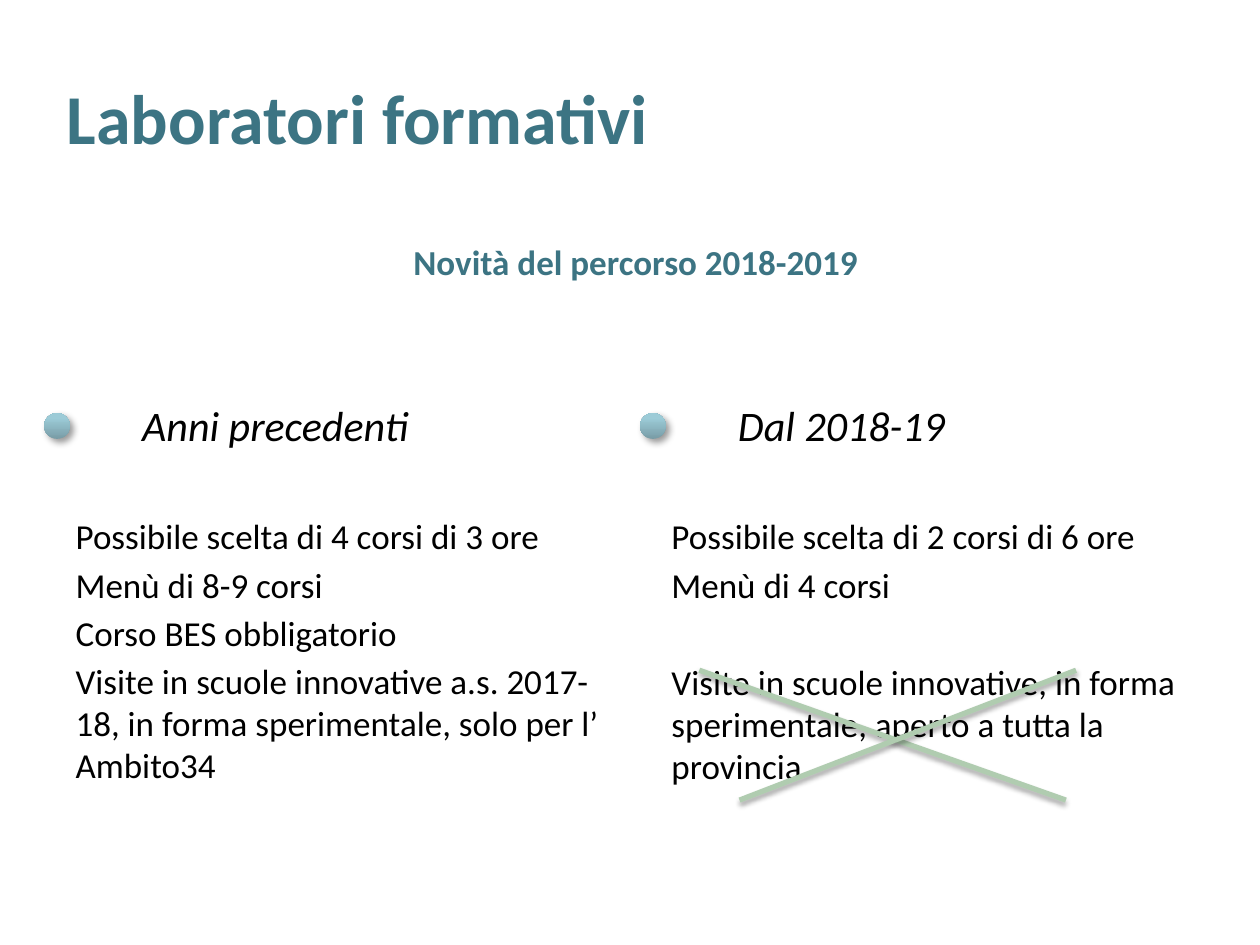
"""Build the slide comparing the training workshops before and from 2018-19."""
from lxml.etree import SubElement
from pptx import Presentation
from pptx.dml.color import RGBColor
from pptx.enum.shapes import MSO_CONNECTOR, MSO_SHAPE
from pptx.enum.text import MSO_ANCHOR, MSO_AUTO_SIZE, PP_ALIGN
from pptx.oxml.ns import qn
from pptx.util import Pt

THEME = {
    "font": "Calibri", "teal": "3C7483", "ink": "000000",
    "dark": "789CA6", "light": "9CCBD7", "cross": "B0CCB0",
    "title": 40, "head": 24, "text": 20,
}
TITLE = "Laboratori formativi"
NEWS = "Novità del percorso 2018-2019"
GAP, SKIP, BREAK = 3.6, 31.6, 37.2
COLUMNS = [
    ("Anni precedenti", [
        ("Possibile scelta di 4 corsi di 3 ore", BREAK),
        ("Menù di 8-9 corsi", GAP),
        ("Corso BES obbligatorio", GAP),
        ("Visite in scuole innovative a.s. 2017-18, in forma sperimentale, "
         "solo per l’ Ambito34", GAP),
    ]),
    ("Dal 2018-19", [
        ("Possibile scelta di 2 corsi di 6 ore", BREAK),
        ("Menù di 4 corsi", GAP),
        ("Visite in scuole innovative, in forma sperimentale, "
         "aperto a tutta la provincia", SKIP),
    ]),
]
LEFT, PITCH = 36, 340.5
STROKES = [(399.6, 383, 609.1, 457.2), (422.6, 457.2, 614.9, 383)]


def color(name):
    return RGBColor.from_string(THEME[name])


def place(shape, *box):
    shape.left, shape.top, shape.width, shape.height = map(Pt, box)
    frame = shape.text_frame
    frame.word_wrap = True
    frame.auto_size = MSO_AUTO_SIZE.NONE
    return frame


def style(par, size, tint, bold=False, italic=False):
    font = par.font
    font.name, font.size = THEME["font"], Pt(THEME[size])
    font.bold, font.italic = bold, italic
    font.color.rgb = color(tint)


def shade(shape, alpha, blur, dist, angle):
    props = shape._element.spPr
    for old in props.findall(qn("a:effectLst")):
        props.remove(old)
    cast = SubElement(
        SubElement(props, qn("a:effectLst")), qn("a:outerShdw"),
        blurRad=str(Pt(blur)), dist=str(Pt(dist)),
        dir=str(angle * 60000), rotWithShape="0")
    tint = SubElement(cast, qn("a:srgbClr"), val=THEME["ink"])
    SubElement(tint, qn("a:alpha"), val=str(alpha * 1000))


def add_line(frame, text, size, before=0, indent=0, italic=False):
    par = frame.paragraphs[0] if not frame.text else frame.add_paragraph()
    par.text = text
    par.space_before = Pt(before)
    props = par._p.get_or_add_pPr()
    props.set("marL", str(Pt(indent)))
    props.set("indent", "0")
    SubElement(props, qn("a:buNone"))
    style(par, size, "ink", italic=italic)


def add_ball(slide, left):
    ball = slide.shapes.add_shape(
        MSO_SHAPE.OVAL, Pt(left), Pt(236), Pt(14.8), Pt(14.8))
    ball.fill.gradient()
    ball.fill.gradient_angle = 90
    stops = zip(ball.fill.gradient_stops, ("dark", "light"), (0, 0.8))
    for stop, tint, spot in stops:
        stop.color.rgb = color(tint)
        stop.position = spot
    ball.line.fill.background()
    shade(ball, 40, 4, 3, 45)


def main():
    deck = Presentation()
    deck.slide_width, deck.slide_height = Pt(720), Pt(540)
    slide = deck.slides.add_slide(deck.slide_layouts[3])
    title, *bodies = slide.placeholders

    frame = place(title, 31, 21.6, 510.5, 90)
    frame.text = TITLE
    frame.vertical_anchor = MSO_ANCHOR.MIDDLE
    frame.paragraphs[0].alignment = PP_ALIGN.LEFT
    style(frame.paragraphs[0], "title", "teal", bold=True)

    for col, (body, (head, items)) in enumerate(zip(bodies, COLUMNS)):
        left = LEFT + col * PITCH
        frame = place(body, left, 224.6, 318.2, 257.8)
        add_line(frame, head, "head", indent=38, italic=True)
        for text, before in items:
            add_line(frame, text, "text", before)
        add_ball(slide, left - 10.8)

    box = slide.shapes.add_textbox(0, 0, 0, 0)
    frame = place(box, LEFT, 116.6, 648, 56.9)
    frame.margin_left, frame.margin_top = Pt(13.7), Pt(21)
    frame.text = NEWS
    frame.paragraphs[0].alignment = PP_ALIGN.CENTER
    style(frame.paragraphs[0], "text", "teal", bold=True)

    for ends in STROKES:
        stroke = slide.shapes.add_connector(
            MSO_CONNECTOR.STRAIGHT, *map(Pt, ends))
        stroke.line.color.rgb = color("cross")
        stroke.line.width = Pt(3)
        shade(stroke, 35, 3.1, 1.8, 90)

    deck.save("out.pptx")


if __name__ == "__main__":
    main()
